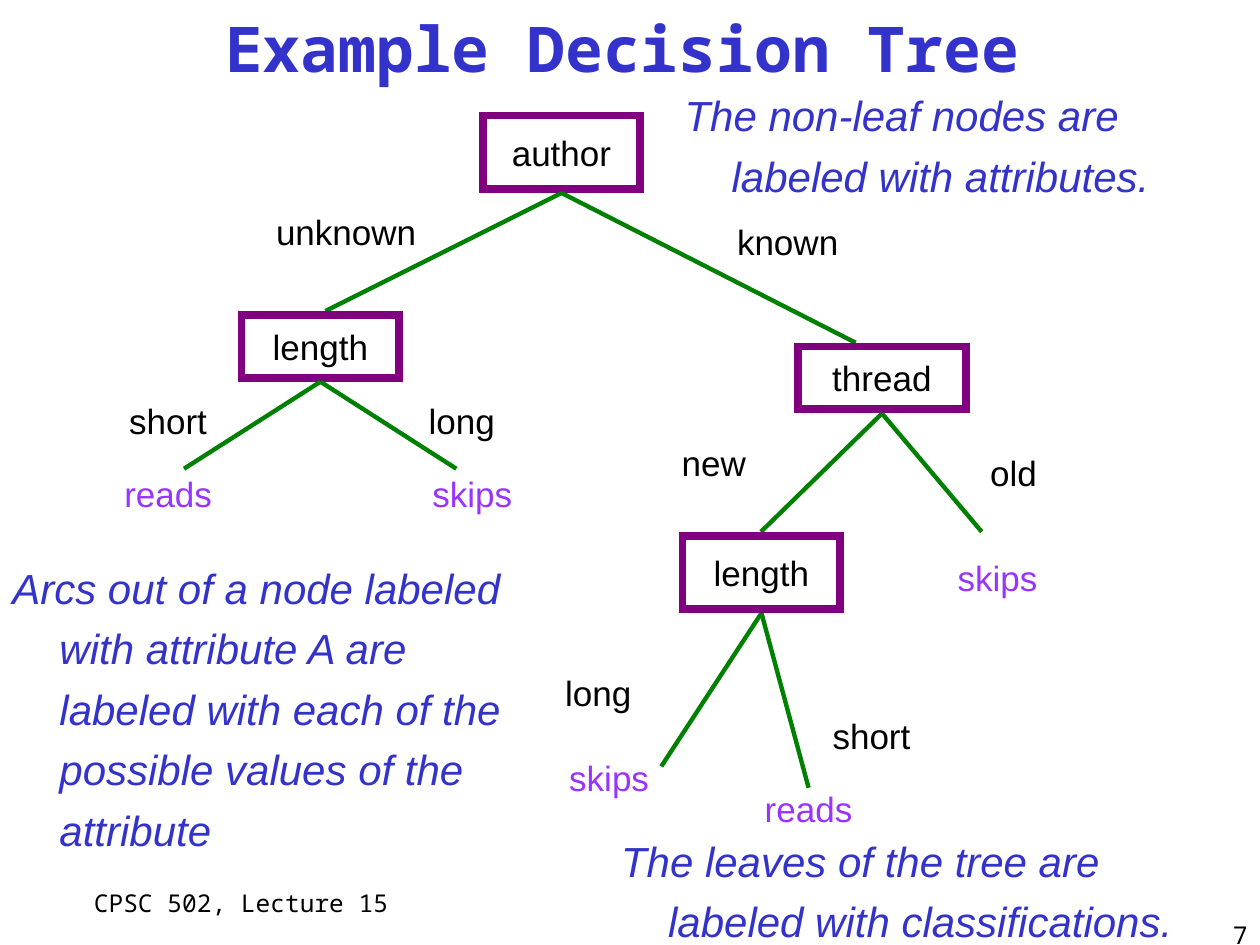
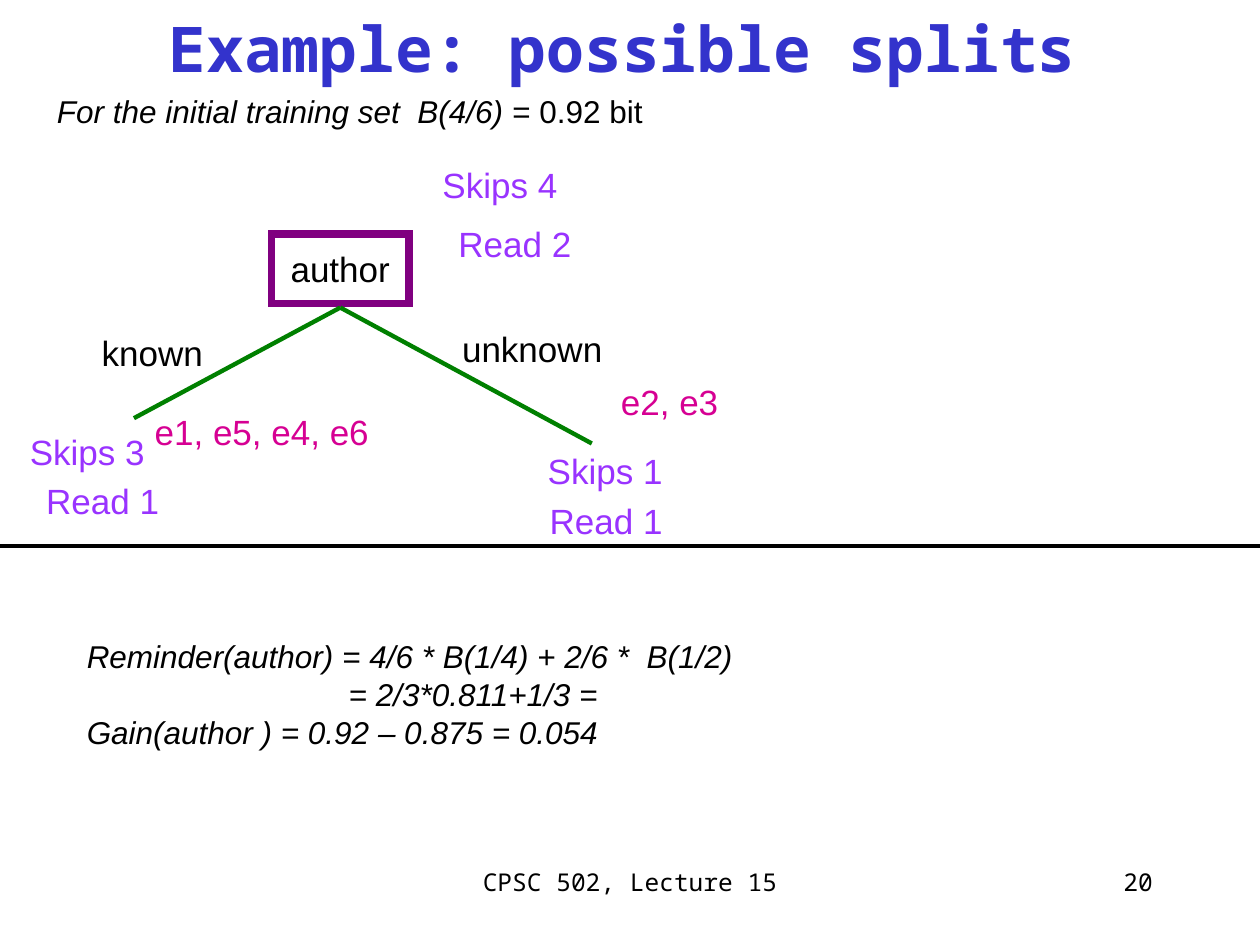
from lxml import etree
from pptx import Presentation
from pptx.dml.color import RGBColor
from pptx.enum.shapes import MSO_CONNECTOR as Link, MSO_SHAPE as Shape
from pptx.enum.text import MSO_ANCHOR as Anchor, PP_ALIGN as Align
from pptx.oxml.ns import qn
from pptx.util import Cm, Pt

BLUE, BLACK, WHITE, PURPLE = "3333CC", "000000", "FFFFFF", "800080"
GREEN, VIOLET, PINK = "008000", "9933FF", "D60093"
SANS, MONO = "Arial", "Noto Sans Mono"
FOOTER = "CPSC 502, Lecture 15"
GAP = 0.08  # between a node and its arcs
PLATE = (2.95, 0.79)  # size of the white plate behind a count

# Lengths in cm. Node: name, centre, size, arcs; arc: label, label centre, end.
TREE = [
    ("author", (11.32, 3.07), (3.18, 1.48), [
        ("unknown", (6.98, 4.66), (6.56, 6.27)),
        ("known", (15.88, 4.87), (17.25, 6.91))]),
    ("length", (6.46, 6.98), (3.18, 1.27), [
        ("short", (3.39, 8.47), (3.71, 9.45)),
        ("long", (9.31, 8.47), (9.2, 9.45))]),
    ("thread", (17.78, 7.62), (3.39, 1.27), [
        ("new", (14.39, 9.32), (15.34, 10.72)),
        ("old", (20.43, 9.53), (19.79, 10.72))]),
    ("length", (15.35, 11.54), (3.18, 1.48), [
        ("long", (12.06, 13.97), (13.33, 15.45)),
        ("short", (17.57, 14.82), (16.3, 15.88))]),
]
LEAVES = [
    ("reads", (3.39, 9.95), VIOLET), ("skips", (9.52, 9.95), VIOLET),
    ("skips", (20.11, 11.65), VIOLET), ("skips", (12.28, 15.67), VIOLET),
    ("reads", (16.3, 16.3), VIOLET),
]
NOTES = [
    ("The non-leaf nodes are labeled with attributes.",
     (13.55, 1.48, 10.16, 2.74)),
    ("The leaves of the tree are labeled with classifications.",
     (12.27, 16.51, 12.5, 3.18)),
    ("Arcs out of a node labeled with attribute A are labeled with each "
     "of the possible values of the attribute", (0, 11.01, 10.59, 6.15)),
]

SPLIT = [
    ("author", (6.86, 5.42), (2.77, 1.4), [
        ("known", (3.07, 7.1), (2.7, 8.43)),
        ("unknown", (10.73, 7.02), (11.93, 8.94))]),
]
COUNTS = [
    ("Skips 4", (10.08, 3.72)), ("Read 2", (10.38, 4.91)),
    ("Skips 3", (1.76, 9.1)), ("Read 1", (2.07, 10.09)),
    ("Skips 1", (12.2, 9.49)), ("Read 1", (12.22, 10.49)),
]
CASES = [
    ("e1, e5, e4, e6", (5.28, 8.7), PINK), ("e2, e3", (13.5, 8.09), PINK),
]
START = ("For the initial training set  B(4/6) = ", "0.92 bit")
GAIN = [  # text, indent
    ("Reminder(author) = 4/6 * B(1/4) + 2/6 *  B(1/2)", 0),
    ("= 2/3*0.811+1/3 =", 5.28),
    ("Gain(author ) = 0.92 – 0.875 = 0.054", 0),
]


def rgb(code):
    return RGBColor.from_string(code)


def style(para, size, color=BLACK, face=SANS, bold=False, italic=False):
    font = para.font
    font.size, font.name, font.bold, font.italic = Pt(size), face, bold, italic
    font.color.rgb = rgb(color)


def indent(para, left, first=0):
    props = para._p.get_or_add_pPr()
    props.set("marL", str(Cm(left)))
    props.set("indent", str(Cm(first)))


def write(slide, text, box, size, align=Align.LEFT, mid=False, **look):
    """Add a text box and return its first paragraph."""
    frame = slide.shapes.add_textbox(*map(Cm, box)).text_frame
    frame.word_wrap = True
    frame.vertical_anchor = Anchor.MIDDLE if mid else Anchor.TOP
    para = frame.paragraphs[0]
    para.text, para.alignment = text, align
    style(para, size, **look)
    return para


def label(slide, text, spot, color=BLACK):
    """Write a word centred on a spot."""
    x, y = spot
    write(slide, text, (x - 3, y - 0.6, 6, 1.2), 20, Align.CENTER, True,
          color=color)


def line(slide, start, end, color=GREEN, width=2.5):
    link = slide.shapes.add_connector(
        Link.STRAIGHT, *map(Cm, (*start, *end)))
    link.line.color.rgb, link.line.width = rgb(color), Pt(width)
    etree.SubElement(link._element.spPr, qn("a:effectLst"))


def block(slide, text, spot, size, color=BLACK):
    """Add a plain rectangle with a word, centred on a spot."""
    (x, y), (w, h) = spot, size
    box = slide.shapes.add_shape(
        Shape.RECTANGLE, *map(Cm, (x - w / 2, y - h / 2, w, h)))
    box.shadow.inherit = False
    frame = box.text_frame
    frame.word_wrap, frame.vertical_anchor = False, Anchor.MIDDLE
    para = frame.paragraphs[0]
    para.text, para.alignment = text, Align.CENTER
    style(para, 20, color)
    return box


def node(slide, name, spot, size):
    box = block(slide, name, spot, size)
    box.fill.background()
    box.line.color.rgb, box.line.width = rgb(PURPLE), Pt(4.5)
    edge = box.line._get_or_add_ln()
    etree.SubElement(edge, qn("a:miter")).set("lim", "800000")


def count(slide, text, spot):
    box = block(slide, text, spot, PLATE, VIOLET)
    box.fill.solid()
    box.fill.fore_color.rgb = rgb(WHITE)
    box.line.fill.background()


def draw(slide, nodes):
    for name, spot, size, arcs in nodes:
        node(slide, name, spot, size)
        root = spot[0], spot[1] + size[1] / 2 + GAP
        for text, place, end in arcs:
            line(slide, root, end)
            label(slide, text, place)


def page(deck, title, number, foot, corner):
    """Add a slide with title, footer and number, the last two by corner."""
    slide = deck.slides.add_slide(deck.slide_layouts[6])
    write(slide, title, (0.69, 0, 23.7, 1.9), 36, Align.CENTER, True,
          color=BLUE, face=MONO, bold=True)
    write(slide, FOOTER, (*foot, 8.05, 1.27), 14, Align.CENTER, face=MONO)
    write(slide, number, (*corner, 5.28, 1.27), 14, Align.RIGHT, face=MONO)
    return slide


def main():
    deck = Presentation()
    deck.slide_width, deck.slide_height = Cm(25.4), Cm(19.05)

    slide = page(deck, "Example Decision Tree", "7",
                 (0.84, 17.78), (20.12, 18.42))
    draw(slide, TREE)
    for leaf in LEAVES:
        label(slide, *leaf)
    for text, box in NOTES:
        para = write(slide, text, box, 24, color=BLUE, italic=True)
        para.line_spacing, para.space_before = 1.2, Pt(4.8)
        indent(para, 0.95, -0.95)

    slide = page(deck, "Example: possible splits", "20",
                 (8.68, 17.35), (18.21, 17.35))
    draw(slide, SPLIT)
    for item in COUNTS:
        count(slide, *item)
    for case in CASES:
        label(slide, *case)
    line(slide, (0, 11), (25.4, 11), BLACK, 2.25)
    lead, value = START
    para = write(slide, lead, (0.9, 1.73, 12.6, 1.02), 18, italic=True)
    run = para.add_run()
    run.text, run.font.italic = value, False
    for i, (text, left) in enumerate(GAIN):
        if i == 0:
            para = first = write(slide, text, (1.5, 12.72, 21.5, 4.11), 18,
                                 italic=True)
        else:
            para = first._parent.add_paragraph()
            para.text = text
            style(para, 18, italic=True)
        indent(para, left)

    deck.save("out.pptx")


if __name__ == "__main__":
    main()
